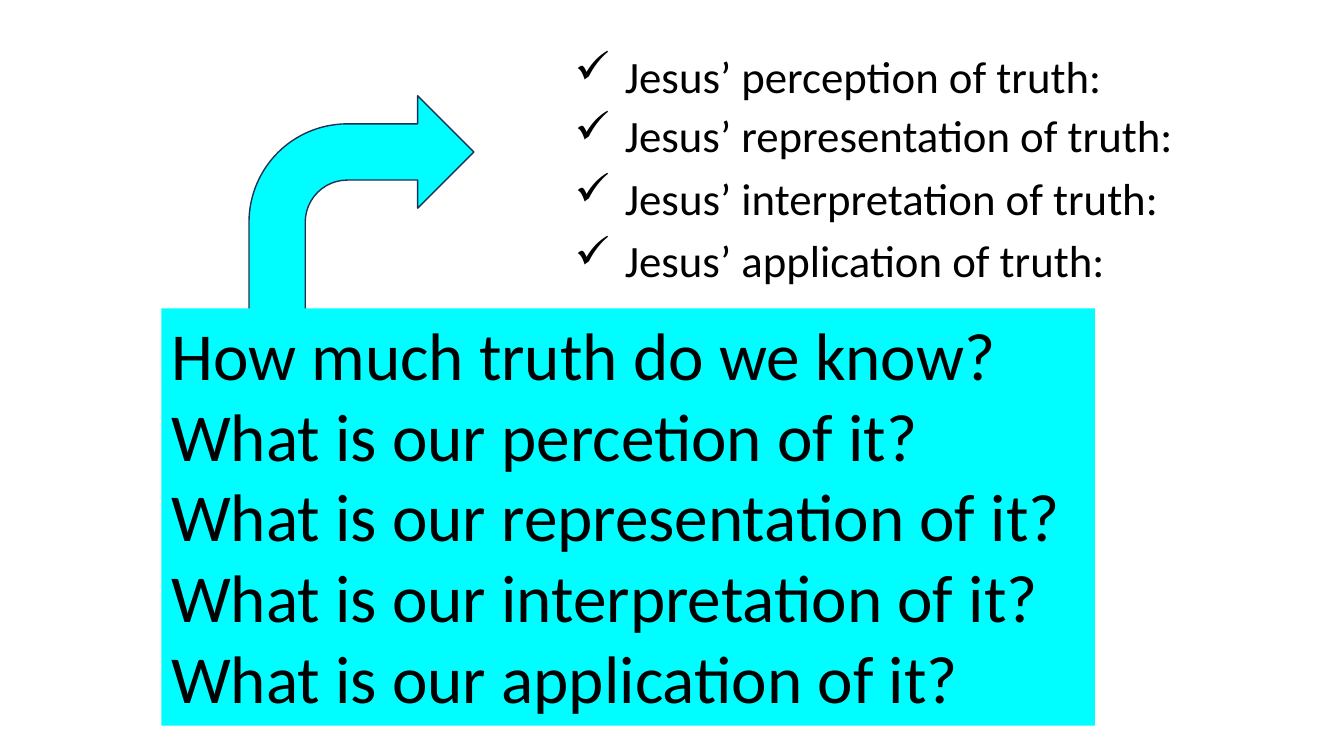
from lxml.etree import SubElement
from pptx import Presentation
from pptx.dml.color import RGBColor
from pptx.enum.shapes import MSO_SHAPE as Preset
from pptx.enum.text import MSO_ANCHOR as Anchor
from pptx.oxml.ns import qn
from pptx.util import Pt

PX = 9144  # 100 px to the inch
COLORS = {"cyan": "00FDFF", "navy": "1E3256", "white": "FFFFFF", "black": "000000"}

QUESTIONS = [
    "How much truth do we know?",
    "What is our percetion of it?",
    "What is our representation of it?",
    "What is our interpretation of it?",
    "What is our application of it?",
]
# text, top, width
TRUTHS = [
    ("Jesus’ interpretation of truth:", 164, 662),
    ("Jesus’ representation of truth:", 102, 640),
    ("Jesus’ perception of truth:", 43, 591),
    ("Jesus’ application of truth:", 226, 640),
]


def add_filled(preset, left, top, width, height, color):
    shape = slide.shapes.add_shape(preset, left * PX, top * PX, width * PX, height * PX)
    shape.shadow.inherit = False
    shape.fill.solid()
    shape.fill.fore_color.rgb = RGBColor.from_string(COLORS[color])
    shape.line.fill.background()
    return shape


def add_text_panel(lines, size, left, top, width, height, color):
    """Add a filled text box and return its paragraphs."""
    panel = slide.shapes.add_textbox(left * PX, top * PX, width * PX, height * PX)
    panel.fill.solid()
    panel.fill.fore_color.rgb = RGBColor.from_string(COLORS[color])
    frame = panel.text_frame
    frame.word_wrap = True
    frame.vertical_anchor = Anchor.TOP
    frame.text = "\n".join(lines)
    for paragraph in frame.paragraphs:
        paragraph.font.name = "Calibri"
        paragraph.font.size = Pt(size)
        paragraph.font.color.rgb = RGBColor.from_string(COLORS["black"])
    return frame.paragraphs


prs = Presentation()
prs.slide_width = 1333 * PX
prs.slide_height = 750 * PX
slide = prs.slides.add_slide(prs.slide_layouts[6])

bent_arrow = add_filled(Preset.BENT_ARROW, 247, 95, 223, 229, "cyan")
bent_arrow.line.color.rgb = RGBColor.from_string(COLORS["navy"])
bent_arrow.line.width = Pt(1)

add_text_panel(QUESTIONS, 48, 160, 306, 926, 414, "cyan")

for truth, top, width in TRUTHS:
    checked = add_text_panel([truth], 32, 560, top, width, 64, "white")[0]
    properties = checked.font._element.getparent()
    properties.set("marL", str(50 * PX))
    properties.set("indent", str(-50 * PX))
    check_mark = SubElement(properties, qn("a:buChar"))
    check_mark.set("char", "✓")
    properties.insert(0, check_mark)

prs.save("out.pptx")
